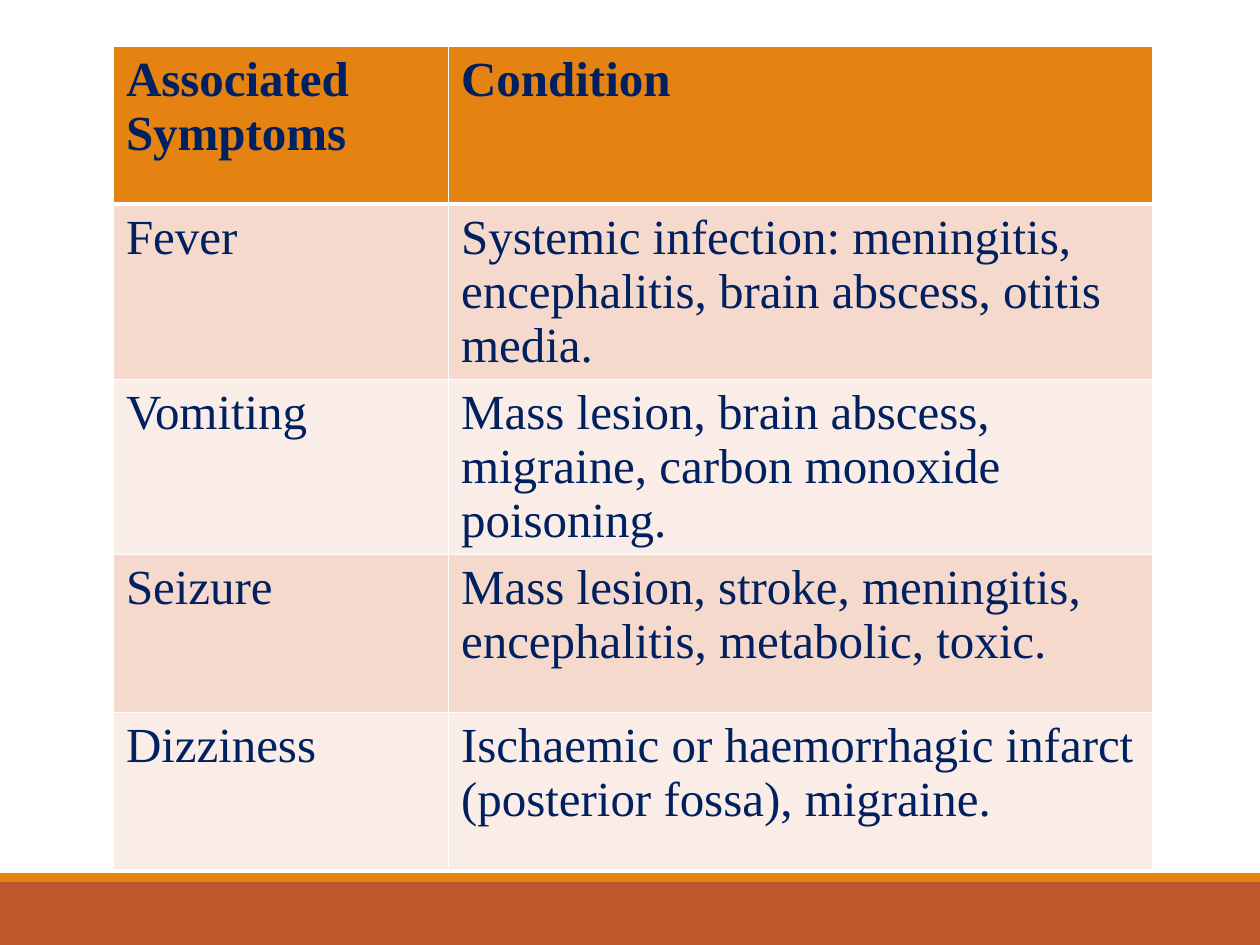
import pptx
import pptx.dml.color
import pptx.enum.shapes
import pptx.util
from lxml import etree
from pptx.oxml.ns import qn

Inches = pptx.util.Inches

ROWS = [
    ("Associated Symptoms", "Condition"),
    ("Fever", "Systemic infection: meningitis, encephalitis, brain abscess, otitis media."),
    ("Vomiting", "Mass lesion, brain abscess, migraine, carbon monoxide poisoning."),
    ("Seizure", "Mass lesion, stroke, meningitis, encephalitis, metabolic, toxic."),
    ("Dizziness", "Ischaemic or haemorrhagic infarct (posterior fossa), migraine."),
]
COLUMN_WIDTHS = (2.66, 5.59)
ROW_HEIGHT = 1.25
TABLE_LEFT, TABLE_TOP = 0.9, 0.37
HEADER_FILL = "E48312"
BAND_FILLS = ("F5D9CC", "FAEDE7")
BORDER_COLOR = "FFFFFF"
FOOTER_BANDS = [(7, 0.5, "BD582C"), (6.93, 0.07, "E48312")]  # top, height, fill
TEXT_FORMAT = {"name": "Times New Roman", "size": pptx.util.Pt(28)}
TEXT_COLOR = "002060"


def paint(fill, color):
    fill.solid()
    fill.fore_color.rgb = pptx.dml.color.RGBColor.from_string(color)


def add_borders(cell, widths):
    """Put solid borders on a cell; widths holds points for L, R, T and B."""
    properties = cell._tc.get_or_add_tcPr()
    for position, (side, points) in enumerate(zip("LRTB", widths)):
        border = etree.Element(qn(f"a:ln{side}"), w=str(pptx.util.Pt(points)))
        solid = etree.SubElement(border, qn("a:solidFill"))
        etree.SubElement(solid, qn("a:srgbClr"), val=BORDER_COLOR)
        properties.insert(position, border)


def add_footer(slide, slide_width):
    for top, height, color in FOOTER_BANDS:
        band = slide.shapes.add_shape(
            pptx.enum.shapes.MSO_SHAPE.RECTANGLE,
            0, Inches(top), slide_width, Inches(height))
        band.shadow.inherit = False
        paint(band.fill, color)
        band.line.fill.background()


def add_symptom_table(slide):
    table = slide.shapes.add_table(
        len(ROWS), len(COLUMN_WIDTHS), Inches(TABLE_LEFT), Inches(TABLE_TOP),
        Inches(sum(COLUMN_WIDTHS)), Inches(ROW_HEIGHT * len(ROWS))).table
    for column, width in zip(table.columns, COLUMN_WIDTHS):
        column.width = Inches(width)
    for index, texts in enumerate(ROWS):
        is_header = index == 0
        row_fill = HEADER_FILL if is_header else BAND_FILLS[(index - 1) % 2]
        border_widths = (1, 1, 3 if index == 1 else 1, 3 if is_header else 1)
        table.rows[index].height = Inches(ROW_HEIGHT)
        for cell, text in zip(table.rows[index].cells, texts):
            cell.text = text
            font = cell.text_frame.paragraphs[0].runs[0].font
            for attribute, value in {**TEXT_FORMAT, "bold": is_header}.items():
                setattr(font, attribute, value)
            paint(font.fill, TEXT_COLOR)
            paint(cell.fill, row_fill)
            add_borders(cell, border_widths)


def main():
    presentation = pptx.Presentation()
    presentation.slide_width = Inches(10)
    presentation.slide_height = Inches(7.5)
    slide = presentation.slides.add_slide(presentation.slide_layouts[6])
    add_footer(slide, presentation.slide_width)
    add_symptom_table(slide)
    presentation.save("out.pptx")


if __name__ == "__main__":
    main()
